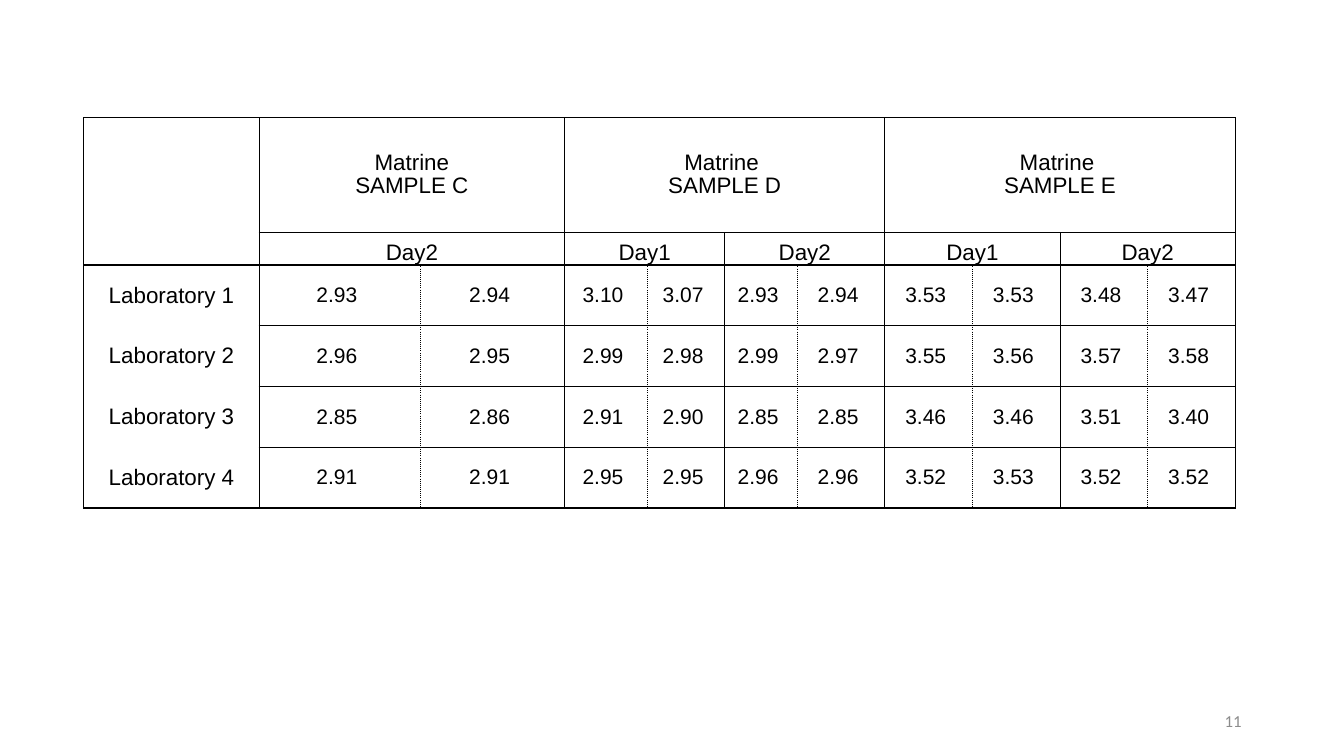
from dataclasses import dataclass

from lxml.etree import SubElement
from pptx import Presentation
from pptx.dml.color import RGBColor
from pptx.enum.text import MSO_ANCHOR, PP_ALIGN
from pptx.oxml.ns import qn
from pptx.slide import Slide
from pptx.table import Table, _Cell
from pptx.util import Pt

BLACK = RGBColor(0x00, 0x00, 0x00)
GRAY = RGBColor(0x8C, 0x8C, 0x8C)
HEADING_SIZE = 16
VALUE_SIZE = 15
COLUMN_WIDTHS = [125.3, 115.2, 103, 59, 55.4, 51.8] + [62.6] * 5
ROW_HEIGHTS = [82.1, 23] + [43.4] * 4
SIDES = ("L", "R", "T", "B")


@dataclass(frozen=True)
class Heading:
    row: int
    column: int
    span: int
    lines: tuple[str, ...]
    anchor: MSO_ANCHOR = MSO_ANCHOR.MIDDLE
    depth: int = 1


@dataclass(frozen=True)
class Laboratory:
    name: str
    values: tuple[str, ...]


HEADINGS = [
    Heading(0, 0, 1, ("",), depth=2),
    Heading(0, 1, 2, ("Matrine", "SAMPLE C")),
    Heading(0, 3, 4, ("Matrine ", "SAMPLE D")),
    Heading(0, 7, 4, ("Matrine ", "SAMPLE E")),
] + [
    Heading(1, 1 + 2 * index, 2, (day,), MSO_ANCHOR.BOTTOM)
    for index, day in enumerate(("Day2", "Day1", "Day2", "Day1", "Day2"))
]

LABORATORIES = [
    Laboratory("Laboratory 1", ("2.93", "2.94", "3.10", "3.07", "2.93", "2.94", "3.53", "3.53", "3.48", "3.47")),
    Laboratory("Laboratory 2", ("2.96", "2.95", "2.99", "2.98", "2.99", "2.97", "3.55", "3.56", "3.57", "3.58")),
    Laboratory("Laboratory 3", ("2.85", "2.86", "2.91", "2.90", "2.85", "2.85", "3.46", "3.46", "3.51", "3.40")),
    Laboratory("Laboratory 4", ("2.91", "2.91", "2.95", "2.95", "2.96", "2.96", "3.52", "3.53", "3.52", "3.52")),
]


def set_borders(cell: _Cell, solid: str = "LRTB", dotted: str = "") -> None:
    cell.fill.background()
    properties = cell._tc.get_or_add_tcPr()
    for position, side in enumerate(SIDES):
        line = SubElement(properties, qn(f"a:ln{side}"), w=str(Pt(1)))
        properties.insert(position, line)
        if side not in solid + dotted:
            SubElement(line, qn("a:noFill"))
            continue
        fill = SubElement(line, qn("a:solidFill"))
        SubElement(fill, qn("a:srgbClr"), val=str(BLACK))
        SubElement(line, qn("a:prstDash"), val="sysDot" if side in dotted else "solid")


def write_cell(cell: _Cell, lines: tuple[str, ...], size: float,
               anchor: MSO_ANCHOR = MSO_ANCHOR.MIDDLE, spacing: float = 1.0) -> None:
    cell.vertical_anchor = anchor
    cell.margin_left = cell.margin_right = Pt(3.6)
    cell.margin_top = cell.margin_bottom = Pt(0)
    cell.text = "\n".join(lines)
    for para in cell.text_frame.paragraphs:
        para.alignment = PP_ALIGN.CENTER
        para.line_spacing = spacing
        para.font.name = "Arial"
        para.font.size = Pt(size)
        para.font.color.rgb = BLACK


def draw_heading(table: Table, heading: Heading) -> None:
    last_row = heading.row + heading.depth - 1
    last_column = heading.column + heading.span - 1
    for row in range(heading.row, last_row + 1):
        for column in range(heading.column, last_column + 1):
            cell = table.cell(row, column)
            write_cell(cell, ("",), HEADING_SIZE)
            set_borders(cell)
    origin = table.cell(heading.row, heading.column)
    if heading.span * heading.depth > 1:
        origin.merge(table.cell(last_row, last_column))
    write_cell(origin, heading.lines, HEADING_SIZE, heading.anchor, 0.93)


def draw_laboratory(table: Table, index: int, laboratory: Laboratory) -> None:
    row = index + 2
    name_cell = table.cell(row, 0)
    write_cell(name_cell, (laboratory.name,), HEADING_SIZE)
    outer = {0: "T", len(LABORATORIES) - 1: "B"}.get(index, "")
    set_borders(name_cell, "LR" + outer)
    for column, value in enumerate(laboratory.values, start=1):
        cell = table.cell(row, column)
        write_cell(cell, (value + " ",), VALUE_SIZE)
        if column % 2:
            set_borders(cell, "LTB", "R")
        else:
            set_borders(cell, "RTB", "L")


def draw_results(page: Slide) -> None:
    frame = page.shapes.add_table(
        len(ROW_HEIGHTS), len(COLUMN_WIDTHS), Pt(59.8), Pt(84.2),
        Pt(sum(COLUMN_WIDTHS)), Pt(sum(ROW_HEIGHTS)))
    table = frame.table
    table.first_row = False
    table.horz_banding = False
    for column, width in zip(table.columns, COLUMN_WIDTHS):
        column.width = Pt(width)
    for row, height in zip(table.rows, ROW_HEIGHTS):
        row.height = Pt(height)
    for heading in HEADINGS:
        draw_heading(table, heading)
    for index, laboratory in enumerate(LABORATORIES):
        draw_laboratory(table, index, laboratory)


def draw_page_number(page: Slide) -> None:
    box = page.shapes.add_textbox(Pt(678), Pt(500.5), Pt(216), Pt(28.8))
    box.text_frame.word_wrap = True
    box.text_frame.vertical_anchor = MSO_ANCHOR.MIDDLE
    para = box.text_frame.paragraphs[0]
    para.text = "11"
    para.alignment = PP_ALIGN.RIGHT
    para.font.name = "Calibri"
    para.font.size = Pt(12)
    para.font.color.rgb = GRAY


def main() -> None:
    deck = Presentation()
    deck.slide_width = Pt(960)
    deck.slide_height = Pt(540)
    page = deck.slides.add_slide(deck.slide_layouts[6])
    draw_page_number(page)
    draw_results(page)
    deck.save("out.pptx")


if __name__ == "__main__":
    main()
